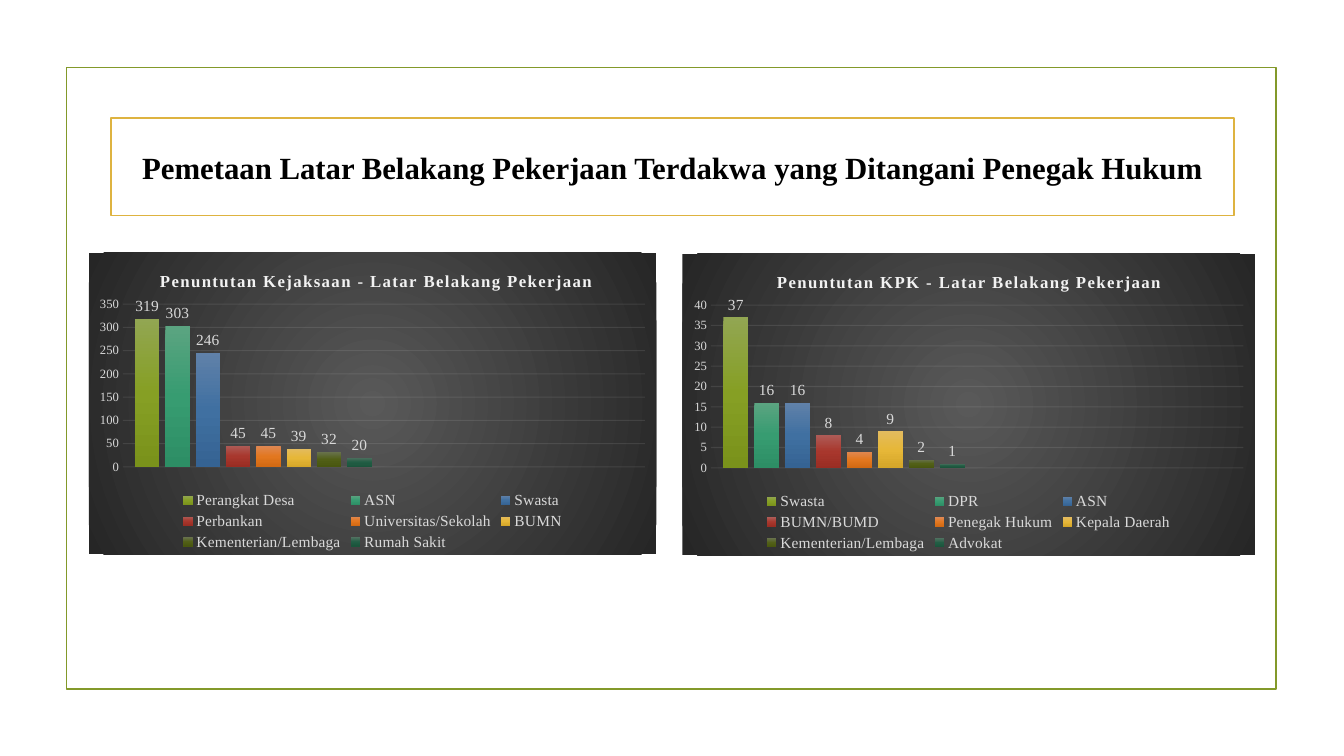
import pptx
import pptx.chart.data
import pptx.dml.color
import pptx.enum.chart
import pptx.enum.text
import pptx.oxml
import pptx.oxml.ns
import pptx.util

Pt = pptx.util.Pt
qn = pptx.oxml.ns.qn
ENUM = pptx.enum.chart

# Content
TITLE = "Pemetaan Latar Belakang Pekerjaan Terdakwa yang Ditangani Penegak Hukum"
CHARTS = [
    {
        "title": "Penuntutan Kejaksaan - Latar Belakang Pekerjaan",
        "box": (63.4, 180.7, 405.4, 215.3),
        "head": (0.12, 0.05),
        "plot": (0.06, 0.17, 0.92, 0.54),
        "top": 350, "step": 50,
        "data": [("Perangkat Desa", 319), ("ASN", 303), ("Swasta", 246),
                 ("Perbankan", 45), ("Universitas/Sekolah", 45), ("BUMN", 39),
                 ("Kementerian/Lembaga", 32), ("Rumah Sakit", 20)],
    },
    {
        "title": "Penuntutan KPK - Latar Belakang Pekerjaan",
        "box": (487.4, 181.4, 409, 215.3),
        "head": (0.16, 0.05),
        "plot": (0.05, 0.17, 0.93, 0.54),
        "top": 40, "step": 5,
        "data": [("Swasta", 37), ("DPR", 16), ("ASN", 16),
                 ("BUMN/BUMD", 8), ("Penegak Hukum", 4), ("Kepala Daerah", 9),
                 ("Kementerian/Lembaga", 2), ("Advokat", 1)],
    },
]
FRAME = (47.5, 48.2, 864, 444.2)
BANNER = (79.2, 84.2, 802.1, 69.8)

THEME = {
    "font": "Times New Roman",
    "title": 22, "head": 12, "label": 11, "base": 10, "axis": 9,
    "black": "000000", "white": "FFFFFF", "pale": "F2F2F2", "grey": "D9D9D9",
    "green": "83992A", "gold": "DEB340",
    "back": ("595959", "262626"),
    "bars": [("92A652", "869F24", "7A921B"), ("5BA481", "379C71", "2D8E65"),
             ("6081A9", "4070A1", "356393"), ("AE5B56", "A8372D", "9A2D23"),
             ("DF8853", "E2771F", "D26912"), ("E3BB5F", "E6B738", "D5A629"),
             ("68724D", "515F16", "495710"), ("507160", "215D44", "1B553C")],
}
ROUND = ('<a:path path="circle"><a:fillToRect l="50000" t="50000" '
         'r="50000" b="50000"/></a:path>')
DOWN = '<a:lin ang="5400000" scaled="0"/>'


# Formatting helpers
def rgb(name):
    return pptx.dml.color.RGBColor.from_string(THEME.get(name, name))


def tone(font, size, color, bold=False):
    font.name = THEME["font"]
    font.size = Pt(THEME[size])
    font.bold = bold
    font.color.rgb = rgb(color)


def write(frame, text, size="base", color="black", bold=True, space=0):
    line = frame.paragraphs[0]
    line.alignment = pptx.enum.text.PP_ALIGN.CENTER
    run = line.add_run()
    run.text = text
    tone(run.font, size, color, bold)
    if space:
        run.font._element.set("spc", str(space))


def edge(shape, color):
    shape.line.color.rgb = rgb(color)
    shape.line.width = Pt(1.25)


def make(tag, inner):
    return pptx.oxml.parse_xml(
        f"<{tag} {pptx.oxml.ns.nsdecls('a', 'c')}>{inner}</{tag}>")


def blend(colors, kind):
    last = len(colors) - 1
    stops = "".join(
        f'<a:gs pos="{100000 * i // last}"><a:srgbClr val="{color}"/></a:gs>'
        for i, color in enumerate(colors))
    return f"<a:gradFill><a:gsLst>{stops}</a:gsLst>{kind}</a:gradFill>"


def place(node, index, spot, inner=False):
    old = node.find(qn("c:layout"))
    if old is not None:
        node.remove(old)
    parts = '<c:layoutTarget val="inner"/>' if inner else ""
    keys = "xywh"[:len(spot)]
    parts += "".join(f'<c:{k}Mode val="edge"/>' for k in keys[:2])
    parts += "".join(f'<c:{k} val="{v}"/>' for k, v in zip(keys, spot))
    node.insert(index, make("c:layout", f"<c:manualLayout>{parts}</c:manualLayout>"))


# Chart builder
def draw(slide, item):
    data = pptx.chart.data.CategoryChartData()
    data.categories = ["1", ""]
    for name, value in item["data"]:
        data.add_series(name, (value, None))
    chart = slide.shapes.add_chart(
        ENUM.XL_CHART_TYPE.COLUMN_CLUSTERED, *map(Pt, item["box"]), data).chart
    tone(chart.font, "base", "black")

    # Heading
    chart.has_title = True
    head = chart.chart_title
    write(head.text_frame, item["title"], size="head", color="pale", space=100)
    head.include_in_layout = False
    place(head._element, 1, item["head"])

    # Chart and plot backgrounds
    root = chart._chartSpace
    root.find(qn("c:chart")).addnext(
        make("c:spPr", blend(THEME["back"], ROUND) + "<a:ln><a:noFill/></a:ln>"))
    area = root.find(".//" + qn("c:plotArea"))
    place(area, 0, item["plot"], inner=True)
    area.append(make("c:spPr", "<a:noFill/><a:ln><a:noFill/></a:ln>"))

    # Axes
    chart.category_axis.visible = False
    axis = chart.value_axis
    axis.minimum_scale, axis.maximum_scale = 0, item["top"]
    axis.major_unit = item["step"]
    axis.major_tick_mark = ENUM.XL_TICK_MARK.NONE
    axis.format.line.fill.background()
    tone(axis.tick_labels.font, "axis", "grey")
    grid = axis.major_gridlines.format.line
    grid.width = Pt(0.75)
    grid.color.rgb = rgb("pale")
    color = axis._element.find(
        qn("c:majorGridlines")).find(".//" + qn("a:srgbClr"))
    color.append(make("a:alpha", ""))
    color[0].set("val", "10000")

    # Legend
    chart.has_legend = True
    chart.legend.position = ENUM.XL_LEGEND_POSITION.BOTTOM
    chart.legend.include_in_layout = False
    tone(chart.legend.font, "label", "grey")

    # Bars and labels
    plot = chart.plots[0]
    plot.gap_width, plot.overlap = 100, -24
    plot.vary_by_categories = False
    for bar, colors in zip(plot.series, THEME["bars"]):
        bar.invert_if_negative = False
        bar._element.get_or_add_spPr().append(
            pptx.oxml.parse_xml(blend(colors, DOWN).replace(
                "<a:gradFill>", f"<a:gradFill {pptx.oxml.ns.nsdecls('a')}>", 1)))
        tags = bar.data_labels
        tags.show_value = True
        tags.position = ENUM.XL_LABEL_POSITION.OUTSIDE_END
        tone(tags.font, "label", "grey")


def main():
    deck = pptx.Presentation()
    deck.slide_width, deck.slide_height = Pt(960), Pt(540)
    slide = deck.slides.add_slide(deck.slide_layouts[5])

    # Slide border
    border = slide.shapes.add_shape(1, *map(Pt, FRAME))
    border.shadow.inherit = False
    border.fill.background()
    edge(border, "green")

    # Charts
    for item in CHARTS:
        draw(slide, item)

    # Title
    title = slide.shapes.title
    title.left, title.top, title.width, title.height = map(Pt, BANNER)
    title.fill.solid()
    title.fill.fore_color.rgb = rgb("white")
    edge(title, "gold")
    title.text_frame.word_wrap = True
    title.text_frame.vertical_anchor = pptx.enum.text.MSO_ANCHOR.MIDDLE
    write(title.text_frame, TITLE, size="title")

    deck.save("out.pptx")


if __name__ == "__main__":
    main()
